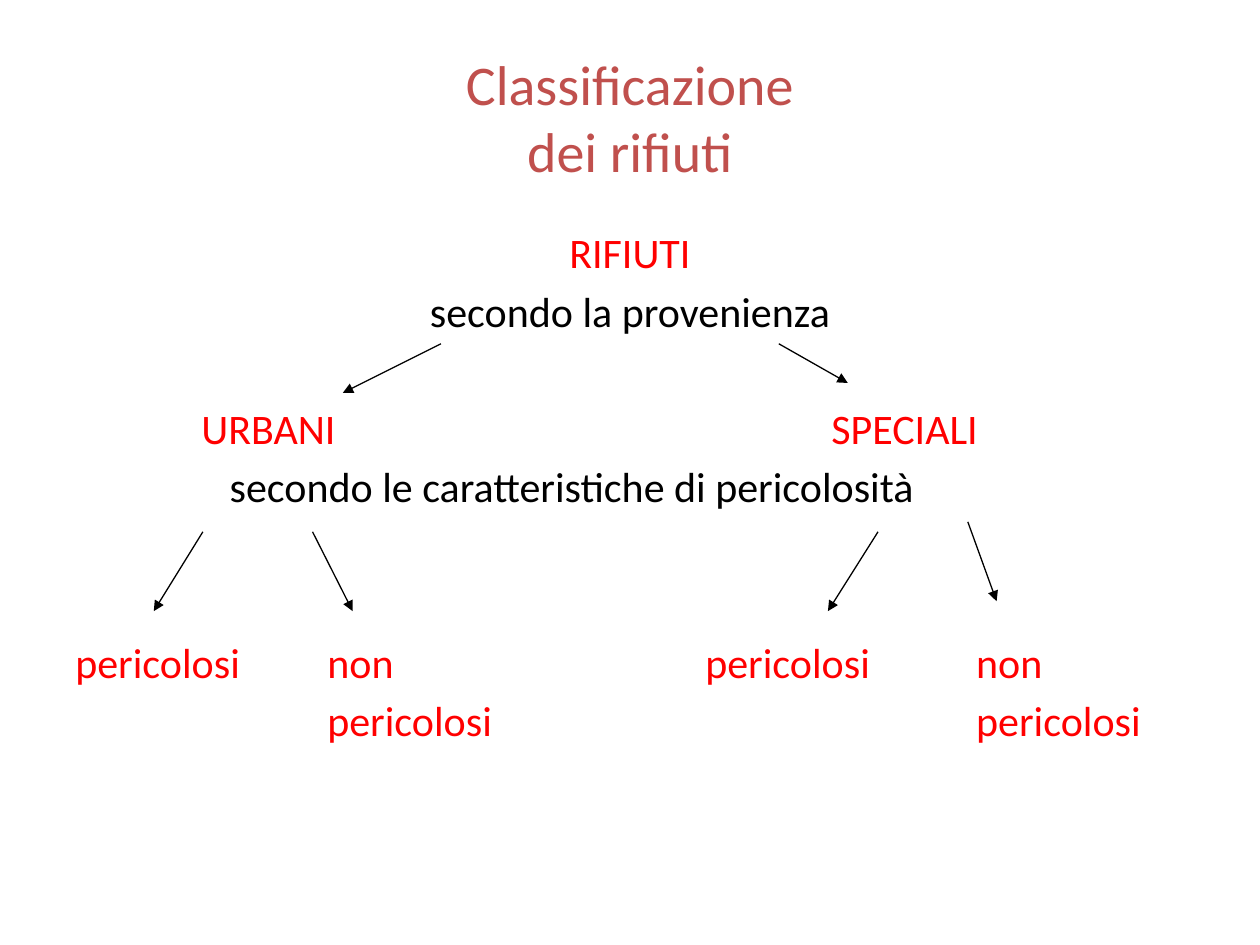
"""Builds a slide with a tree that classifies waste by origin and hazard."""
from collections import namedtuple

from lxml.etree import SubElement
from pptx import Presentation
from pptx.dml.color import RGBColor
from pptx.enum.shapes import MSO_CONNECTOR
from pptx.enum.text import MSO_ANCHOR, PP_ALIGN
from pptx.oxml.ns import qn
from pptx.util import Cm, Pt

Theme = namedtuple("Theme", "font title red black title_size body_size line_width")
theme = Theme("Calibri", RGBColor(0xC0, 0x50, 0x4D), RGBColor(0xFF, 0, 0),
              RGBColor(0, 0, 0), Pt(32), Pt(24), Pt(0.75))


def add_text_box(page, left, top, width, height):
    box = page.shapes.add_textbox(Cm(left), Cm(top), Cm(width), Cm(height))
    box.text_frame.word_wrap = True
    return box


def fill_paragraph(para, text, size, color, alignment):
    para.text = text
    para.alignment = alignment
    for span in para.runs:
        span.font.name = theme.font
        span.font.size = size
        span.font.color.rgb = color


deck = Presentation()
deck.slide_width, deck.slide_height = Cm(25.4), Cm(19.05)
page = deck.slides.add_slide(deck.slide_layouts[6])

title = add_text_box(page, 1.27, 0.76, 22.86, 3.18)
title.text_frame.vertical_anchor = MSO_ANCHOR.MIDDLE
fill_paragraph(title.text_frame.paragraphs[0], "Classificazione\vdei rifiuti",
               theme.title_size, theme.title, PP_ALIGN.CENTER)

body = add_text_box(page, 1.27, 4.45, 22.86, 12.57)
row_gap, row_pitch = 4.4, 33.7
rows = [
    ("RIFIUTI", theme.red, 0, []),
    ("secondo la provenienza", theme.black, 0, []),
    ("\tURBANI\tSPECIALI", theme.red, 1, [2.54, 15.24]),
    ("\tsecondo le caratteristiche di pericolosità", theme.black, 0, [3.11]),
    ("pericolosi\tnon\tpericolosi\tnon", theme.red, 2, [5.08, 12.7, 18.16]),
    ("\tpericolosi\tpericolosi", theme.red, 0, [5.08, 18.16]),
]
for index, (text, color, skipped_rows, tabs) in enumerate(rows):
    para = body.text_frame.add_paragraph() if index else body.text_frame.paragraphs[0]
    fill_paragraph(para, text, theme.body_size, color,
                   PP_ALIGN.LEFT if tabs else PP_ALIGN.CENTER)
    para.space_before = Pt(row_gap + skipped_rows * row_pitch)
    if tabs:
        tab_list = SubElement(para._p.get_or_add_pPr(), qn("a:tabLst"))
        for position in tabs:
            SubElement(tab_list, qn("a:tab"), pos=str(Cm(position)), algn="l")

arrows = [
    (8.89, 6.93, 6.91, 7.92),
    (15.7, 6.93, 17.09, 7.72),
    (4.09, 10.72, 3.1, 12.32),
    (6.3, 10.72, 7.11, 12.32),
    (17.7, 10.72, 16.69, 12.32),
    (19.51, 10.52, 20.09, 12.12),
]
for ends in arrows:
    arrow = page.shapes.add_connector(MSO_CONNECTOR.STRAIGHT, *map(Cm, ends))
    arrow.line.color.rgb = theme.black
    arrow.line.width = theme.line_width
    SubElement(arrow.line._get_or_add_ln(), qn("a:tailEnd"), type="triangle")
    SubElement(arrow._element.spPr, qn("a:effectLst"))

deck.save("out.pptx")
